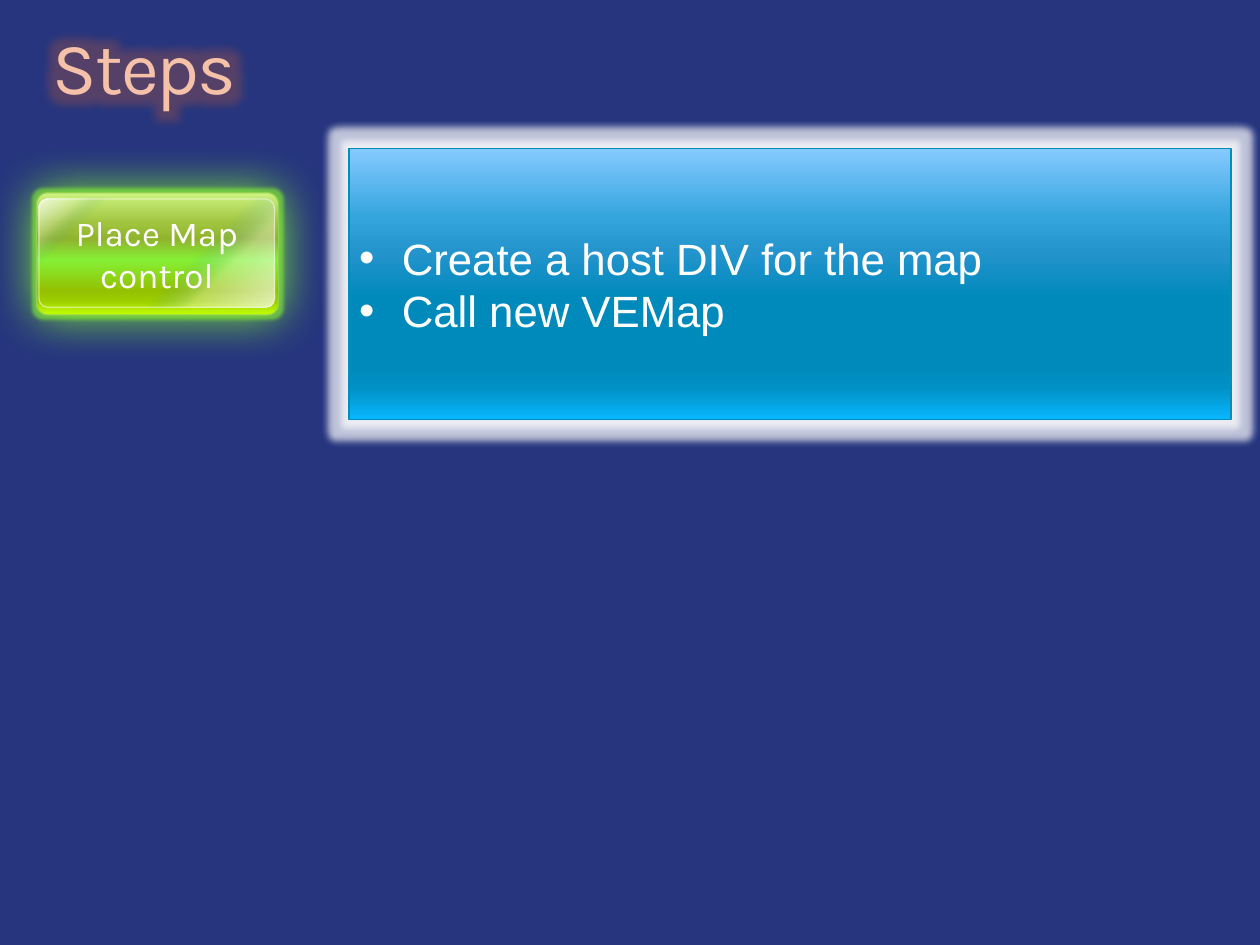
from dataclasses import dataclass
from typing import Optional

from lxml.etree import SubElement
from pptx import Presentation
from pptx.dml.color import RGBColor
from pptx.enum.shapes import MSO_SHAPE
from pptx.enum.text import MSO_ANCHOR, PP_ALIGN
from pptx.oxml.ns import qn
from pptx.util import Inches, Pt

COLORS = {
    "background": "26357E",
    "white": "FFFFFF",
    "title_glow": "E76429",
    "panel_line": "008DC0",
    "button_line": "92D050",
    "button_glow": "85F034",
}
STOPS = (0, 25, 38, 55, 80, 88, 100)
PANEL_COLORS = ("85CBFF", "35A5DE", "2494CD", "008ABC", "0089BB", "0090C4", "09B7FF")
BUTTON_COLORS = ("CCF280", "A0C43E", "90B42E", "85F034", "94C101", "9CCD00", "C2FF00")
GLOSS_COLORS = ("FFFFFF", "FFFFFF", "2494CD", "008ABC", "0089BB", "FFFFFF", "FFFFFF")
GLOSS_ALPHAS = (70, 33, 0, 0, 0, 22, 74)


@dataclass
class Gradient:
    stops: tuple
    colors: tuple
    alphas: Optional[tuple] = None
    radial: bool = False


@dataclass
class Effect:
    kind: str
    color: str
    radius: float
    alpha: int


@dataclass
class Plate:
    shape: MSO_SHAPE
    left: float
    top: float
    width: float
    height: float
    fill: Optional[Gradient] = None
    line: Optional[str] = None
    line_alpha: int = 100
    corner: Optional[float] = None
    effects: tuple = ()


def add_color(parent, color: str, alpha: int = 100) -> None:
    node = SubElement(parent, qn("a:srgbClr"), val=color)
    if alpha < 100:
        SubElement(node, qn("a:alpha"), val=str(alpha * 1000))


def add_gradient(parent, gradient: Gradient, index: int) -> None:
    """Insert a top-to-bottom or radial gradient at a child index."""
    node = SubElement(parent, qn("a:gradFill"), rotWithShape="1")
    parent.insert(index, node)
    stops = SubElement(node, qn("a:gsLst"))
    alphas = gradient.alphas or (100,) * len(gradient.stops)
    for position, color, alpha in zip(gradient.stops, gradient.colors, alphas):
        stop = SubElement(stops, qn("a:gs"), pos=str(position * 1000))
        add_color(stop, color, alpha)
    if gradient.radial:
        focus = SubElement(node, qn("a:path"), {"path": "circle"})
        SubElement(focus, qn("a:fillToRect"), l="100000", t="100000")
    else:
        SubElement(node, qn("a:lin"), ang="5400000", scaled="0")


def add_effect(parent, effect: Effect) -> None:
    size_name = "rad" if effect.kind == "glow" else "blurRad"
    node = SubElement(parent, qn(f"a:{effect.kind}"), {size_name: str(Pt(effect.radius))})
    add_color(node, effect.color, effect.alpha)


def add_plate(shapes, plate: Plate):
    box = shapes.add_shape(plate.shape, Inches(plate.left), Inches(plate.top),
                           Inches(plate.width), Inches(plate.height))
    if plate.corner is not None:
        box.adjustments[0] = plate.corner
    properties = box._element.spPr
    if plate.fill:
        add_gradient(properties, plate.fill, 2)
    else:
        box.fill.background()
    if plate.line:
        box.line.color.rgb = RGBColor.from_string(plate.line)
        box.line.width = Pt(0.75)
        if plate.line_alpha < 100:
            color = properties.find(".//" + qn("a:ln")).find(".//" + qn("a:srgbClr"))
            SubElement(color, qn("a:alpha"), val=str(plate.line_alpha * 1000))
    else:
        box.line.fill.background()
    box.shadow.inherit = False
    for effect in plate.effects:
        add_effect(properties.find(qn("a:effectLst")), effect)
    return box


def set_text(box, lines: tuple, font: str, size: float, align: PP_ALIGN,
             margins: tuple, bullet_indent: float = 0) -> None:
    frame = box.text_frame
    frame.word_wrap = True
    frame.vertical_anchor = MSO_ANCHOR.MIDDLE
    frame.margin_left = frame.margin_right = Inches(margins[0])
    frame.margin_top = frame.margin_bottom = Inches(margins[1])
    for number, line in enumerate(lines):
        para = frame.add_paragraph() if number else frame.paragraphs[0]
        para.alignment = align
        if bullet_indent:
            properties = para._p.get_or_add_pPr()
            properties.set("marL", str(Inches(bullet_indent)))
            properties.set("indent", str(-Inches(bullet_indent)))
            SubElement(properties, qn("a:buFont"), typeface="Arial")
            SubElement(properties, qn("a:buChar"), char="•")
        span = para.add_run()
        span.text = line
        span.font.name = font
        span.font.size = Pt(size)
        span.font.color.rgb = RGBColor.from_string(COLORS["white"])


def set_title(page, text: str) -> None:
    title = page.shapes.title
    title.left, title.top = Inches(0.42), Inches(0.25)
    title.width, title.height = Inches(9.16), Inches(0.64)
    frame = title.text_frame
    frame.margin_left = frame.margin_right = 0
    frame.margin_top = frame.margin_bottom = 0
    frame.vertical_anchor = MSO_ANCHOR.TOP
    para = frame.paragraphs[0]
    para.alignment = PP_ALIGN.LEFT
    para.line_spacing = 0.9
    span = para.add_run()
    span.text = text
    span.font.name = "Karla"
    span.font.size = Pt(42)
    properties = span.font._element
    properties.set("spc", "-110")
    add_gradient(properties, Gradient((28, 52, 56), ("FFFFFF", "F5C1A9", "FFD6A9")), 0)
    effects = SubElement(properties, qn("a:effectLst"))
    properties.insert(1, effects)
    add_effect(effects, Effect("glow", COLORS["title_glow"], 24, 25))


def main() -> None:
    deck = Presentation()
    deck.slide_width, deck.slide_height = Inches(10), Inches(7.5)
    page = deck.slides.add_slide(deck.slide_layouts[5])
    page.background.fill.solid()
    page.background.fill.fore_color.rgb = RGBColor.from_string(COLORS["background"])
    set_title(page, "Steps")

    panel = add_plate(page.shapes, Plate(
        MSO_SHAPE.RECTANGLE, 2.77, 1.18, 7, 2.15,
        Gradient(STOPS, PANEL_COLORS), COLORS["panel_line"],
        effects=(Effect("glow", COLORS["white"], 8, 70),)))
    set_text(panel, ("Create a host DIV for the map", "Call new VEMap"),
             "Arial", 25, PP_ALIGN.LEFT, (0.08, 0.04), bullet_indent=0.34)

    button = page.shapes.add_group_shape().shapes
    rounded = MSO_SHAPE.ROUNDED_RECTANGLE
    add_plate(button, Plate(
        rounded, 0.29, 1.53, 1.92, 0.97,
        Gradient(STOPS, BUTTON_COLORS), COLORS["button_line"], corner=0.09,
        effects=(Effect("glow", COLORS["button_glow"], 4, 60),
                 Effect("outerShdw", COLORS["button_glow"], 28, 100))))
    add_plate(button, Plate(
        rounded, 0.31, 1.58, 1.87, 0.86,
        Gradient(STOPS, GLOSS_COLORS, GLOSS_ALPHAS, radial=True),
        COLORS["white"], line_alpha=50, corner=0.083))
    label = add_plate(button, Plate(rounded, 0.31, 1.56, 1.87, 0.9, corner=0.083))
    set_text(label, ("Place Map control",), "Karla", 20, PP_ALIGN.CENTER, (0.12, 0.06))

    deck.save("out.pptx")


if __name__ == "__main__":
    main()
